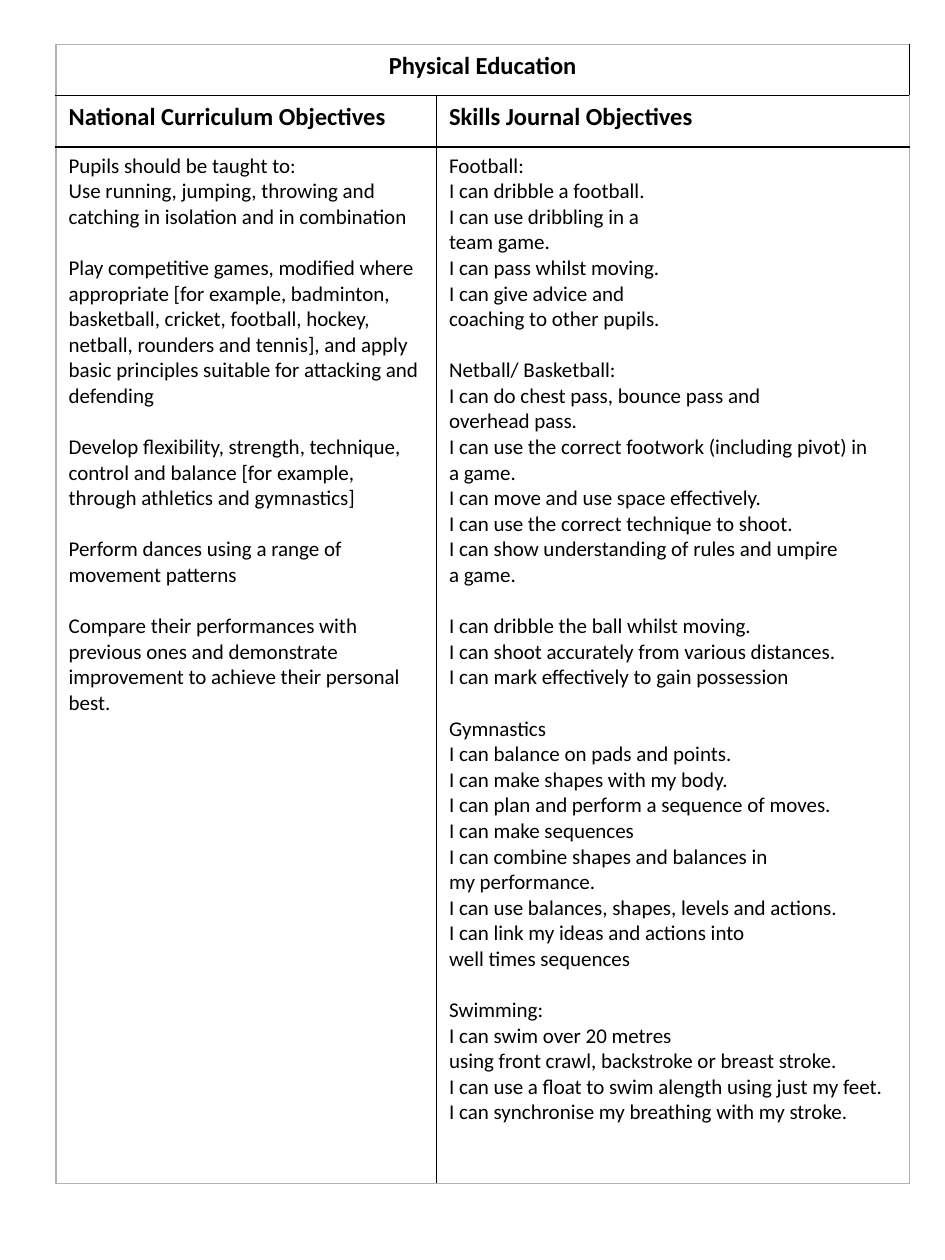
from dataclasses import dataclass

from lxml.etree import SubElement
from pptx import Presentation
from pptx.dml.color import RGBColor
from pptx.enum.text import PP_ALIGN
from pptx.oxml.ns import qn
from pptx.table import Table, _Cell
from pptx.util import Cm, Pt

BLACK = RGBColor(0x00, 0x00, 0x00)
GREY = RGBColor(0xB2, 0xB2, 0xB2)
GROUP_GAP = Pt(14.6)
COLUMN_WIDTHS = (Cm(7.67), Cm(9.53))
ROW_HEIGHTS = (Cm(1.03), Cm(1.03), Cm(20.9))
HEADING_FORMAT = {"name": "Calibri", "size": Pt(14), "bold": True}
BODY_FORMAT = {"name": "Calibri", "size": Pt(12), "bold": False}


@dataclass(frozen=True)
class CellContent:
    row: int
    column: int
    groups: tuple[tuple[str, ...], ...]
    font_format: dict
    alignment: PP_ALIGN = PP_ALIGN.LEFT


CURRICULUM_OBJECTIVES = (
    (
        "Pupils should be taught to:",
        "Use running, jumping, throwing and catching in isolation and in combination",
    ),
    (
        "Play competitive games, modified where appropriate [for example, badminton, "
        "basketball, cricket, football, hockey, netball, rounders and tennis], and apply "
        "basic principles suitable for attacking and defending",
    ),
    (
        "Develop flexibility, strength, technique, control and balance [for example, "
        "through athletics and gymnastics]",
    ),
    ("Perform dances using a range of movement patterns",),
    (
        "Compare their performances with previous ones and demonstrate improvement "
        "to achieve their personal best.",
    ),
)

SKILLS_OBJECTIVES = (
    (
        "Football:",
        "I can dribble a football.",
        "I can use dribbling in a",
        "team game.",
        "I can pass whilst moving.",
        "I can give advice and",
        "coaching to other pupils.",
    ),
    (
        "Netball/ Basketball:",
        "I can do chest pass, bounce pass and",
        "overhead pass.",
        "I can use the correct footwork (including pivot) in",
        "a game.",
        "I can move and use space effectively.",
        "I can use the correct technique to shoot.",
        "I can show understanding of rules and umpire",
        "a game.",
    ),
    (
        "I can dribble the ball whilst moving.",
        "I can shoot accurately from various distances.",
        "I can mark effectively to gain possession",
    ),
    (
        "Gymnastics",
        "I can balance on pads and points.",
        "I can make shapes with my body.",
        "I can plan and perform a sequence of moves.",
        "I can make sequences",
        "I can combine shapes and balances in",
        "my performance.",
        "I can use balances, shapes, levels and actions.",
        "I can link my ideas and actions into",
        "well times sequences",
    ),
    (
        "Swimming:",
        "I can swim over 20 metres",
        "using front crawl, backstroke or breast stroke.",
        "I can use a float to swim alength using just my feet.",
        "I can synchronise my breathing with my stroke.",
    ),
)

CONTENTS = (
    CellContent(0, 0, (("Physical Education",),), HEADING_FORMAT, PP_ALIGN.CENTER),
    CellContent(1, 0, (("National Curriculum Objectives",),), HEADING_FORMAT),
    CellContent(1, 1, (("Skills Journal Objectives",),), HEADING_FORMAT),
    CellContent(2, 0, CURRICULUM_OBJECTIVES, BODY_FORMAT),
    CellContent(2, 1, SKILLS_OBJECTIVES, BODY_FORMAT),
)


def draw_borders(cell: _Cell, row: int, column: int) -> None:
    outer_sides = {
        "a:lnL": column == 0,
        "a:lnR": column == len(COLUMN_WIDTHS) - 1,
        "a:lnT": row == 0,
        "a:lnB": row == len(ROW_HEIGHTS) - 1,
    }
    properties = cell._tc.get_or_add_tcPr()
    for position, (side, is_outer) in enumerate(outer_sides.items()):
        line = SubElement(properties, qn(side), w=str(Pt(1)))
        fill = SubElement(line, qn("a:solidFill"))
        SubElement(fill, qn("a:srgbClr"), val=str(GREY if is_outer else BLACK))
        properties.remove(line)
        properties.insert(position, line)


def write_cell(table: Table, content: CellContent) -> None:
    text_frame = table.cell(content.row, content.column).text_frame
    paragraph = text_frame.paragraphs[0]
    for group_index, group in enumerate(content.groups):
        for line_index, text in enumerate(group):
            if group_index or line_index:
                paragraph = text_frame.add_paragraph()
            paragraph.alignment = content.alignment
            if group_index and not line_index:
                paragraph.space_before = GROUP_GAP
            run = paragraph.add_run()
            run.text = text
            for attribute, value in content.font_format.items():
                setattr(run.font, attribute, value)
            run.font.color.rgb = BLACK


def main() -> None:
    presentation = Presentation()
    presentation.slide_width, presentation.slide_height = Cm(19.05), Cm(25.4)
    slide = presentation.slides.add_slide(presentation.slide_layouts[6])
    table = slide.shapes.add_table(
        len(ROW_HEIGHTS), len(COLUMN_WIDTHS), Cm(1.13), Cm(0.9),
        sum(COLUMN_WIDTHS), sum(ROW_HEIGHTS),
    ).table
    table.first_row = table.horz_banding = False
    for column, width in zip(table.columns, COLUMN_WIDTHS):
        column.width = width
    for row, height in zip(table.rows, ROW_HEIGHTS):
        row.height = height
    for index, cell in enumerate(table.iter_cells()):
        cell.fill.background()
        draw_borders(cell, *divmod(index, len(COLUMN_WIDTHS)))
    table.cell(0, 0).merge(table.cell(0, 1))
    for content in CONTENTS:
        write_cell(table, content)
    presentation.save("out.pptx")


if __name__ == "__main__":
    main()
